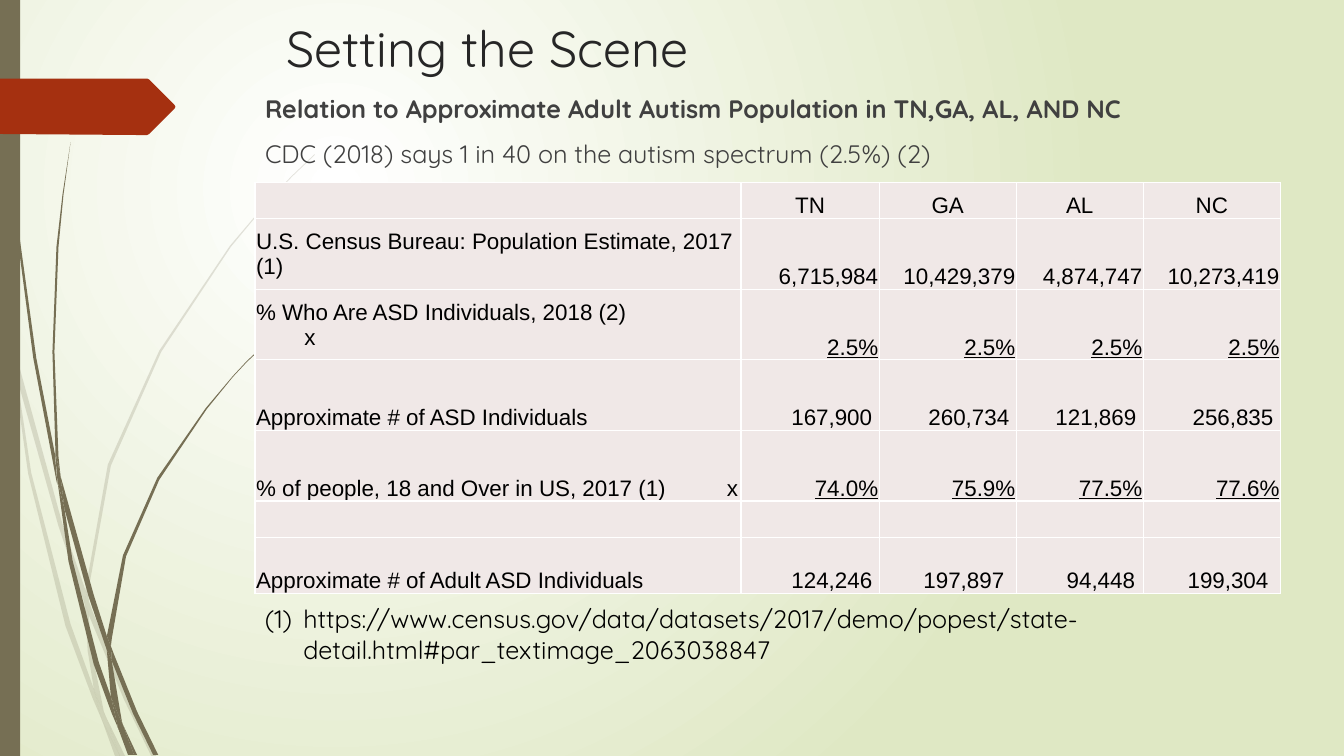
from dataclasses import dataclass

from lxml.etree import SubElement
from pptx import Presentation
from pptx.dml.color import RGBColor
from pptx.enum.shapes import MSO_SHAPE
from pptx.enum.text import MSO_ANCHOR, PP_ALIGN
from pptx.oxml.ns import qn
from pptx.shapes.base import BaseShape
from pptx.slide import Slide
from pptx.table import Table, _Cell
from pptx.text.text import _Paragraph
from pptx.util import Inches, Pt

Points = list[tuple[float, float]]

OLIVE, RUST, BLACK, WHITE, ROSE = "766F54", "A53010", "000000", "FFFFFF", "F0E8E7"
HEADING_FONT, TABLE_FONT = "Quicksand", "Arial"
COLUMN_WIDTHS = [4.82, 1.37, 1.36, 1.26, 1.36]
THIN = 0.01


@dataclass
class Wisp:
    opacity: int
    strands: list[Points]


@dataclass
class Line:
    text: str
    size: int
    color: str
    bold: bool = False


@dataclass
class TextBlock:
    left: float
    top: float
    width: float
    height: float
    lines: list[Line]


@dataclass
class TableRow:
    height: float
    label: str = ""
    values: tuple[str, ...] = ("", "", "", "")
    alignment: PP_ALIGN = PP_ALIGN.RIGHT
    underline: bool = False
    label_anchor: MSO_ANCHOR = MSO_ANCHOR.BOTTOM
    left_insets: tuple[float, ...] = (THIN,) * 4
    right_inset: float = THIN


PALE_WISP = Wisp(20, [
    [(0.11, 3.5), (0.09, 3.22), (0, 2.82), (0, 2.99), (0.1, 3.44)],
    [(0.58, 5.22), (0.84, 5.99), (0.85, 5.86), (0.62, 5.2), (0.14, 3.45), (0.17, 3.76)],
    [(0.92, 6.07), (0.88, 5.96), (0.88, 6.1), (1.23, 6.94), (1.5, 7.5), (1.55, 7.5), (1.27, 6.92)],
    [(1.19, 7.5), (1.24, 7.5), (1.05, 7.11)],
    [(0.93, 6.83), (0.7, 6.19), (0.31, 4.69), (0.17, 3.76), (0.11, 3.5), (0.28, 4.7), (0.65, 6.21),
     (0.92, 6.93), (1.01, 7.14), (0.99, 7.07)],
    [(0.84, 5.99), (0.87, 6.46), (0.93, 6.83), (0.96, 6.92), (1.05, 7.11), (1.03, 7.06), (0.91, 6.46),
     (0.88, 6.1), (0.88, 6.08)],
    [(0.88, 5.84), (1.1, 4.62), (1.6, 3.49), (2.29, 2.45), (2.68, 1.98), (2.9, 1.75), (3.12, 1.54),
     (3.12, 1.53), (2.89, 1.75), (2.68, 1.97), (2.28, 2.44), (1.58, 3.48), (1.07, 4.61), (0.85, 5.84),
     (0.85, 5.86), (0.88, 5.96)],
    [(1.01, 7.14), (1.14, 7.5), (1.19, 7.5)],
    [(0.88, 6.08), (0.88, 6.1), (0.88, 5.96), (0.85, 5.86), (0.84, 5.99)],
    [(0.96, 6.92), (0.93, 6.83), (0.99, 7.07), (1.01, 7.14), (1.19, 7.5), (1.05, 7.11)],
])
DARK_WISP = Wisp(100, [
    [(0.07, 1.1), (0.17, 2.33), (0.33, 3.55), (0.56, 4.77), (0.57, 4.81), (0.55, 4.57), (0.55, 4.53),
     (0.36, 3.55), (0.19, 2.32), (0.08, 1.09), (0.05, 0.48), (0.04, 0), (0.03, 0), (0.04, 0.48)],
    [(0.88, 5.92), (1.06, 6.45), (1.06, 6.31), (0.93, 5.9), (0.6, 4.72), (0.64, 5.05)],
    [(1.13, 6.49), (1.1, 6.41), (1.11, 6.56), (1.32, 7.08), (1.52, 7.49), (1.57, 7.49), (1.36, 7.06)],
    [(1.1, 6.91), (0.98, 6.57), (0.72, 5.56), (0.64, 5.05), (0.57, 4.77), (0.68, 5.57), (0.93, 6.59),
     (1.11, 7.08), (1.17, 7.22), (1.16, 7.17)],
    [(0.6, 4.72), (0.58, 4.53), (0.54, 3.49), (0.58, 2.45), (0.63, 1.93), (0.7, 1.41), (0.62, 1.93),
     (0.56, 2.45), (0.52, 3.49), (0.55, 4.49)],
    [(1.33, 7.49), (1.36, 7.49), (1.22, 7.19)],
    [(0.57, 4.77), (0.64, 5.05), (0.6, 4.72), (0.55, 4.49), (0.55, 4.53)],
    [(1.11, 6.33), (1.25, 5.52), (1.58, 4.76), (2.05, 4.06), (2.31, 3.74), (2.45, 3.59), (2.61, 3.44),
     (2.6, 3.44), (2.45, 3.58), (2.31, 3.73), (2.04, 4.05), (1.56, 4.74), (1.22, 5.51), (1.06, 6.31),
     (1.1, 6.41)],
    [(1.17, 7.22), (1.27, 7.49), (1.31, 7.49)],
    [(1.06, 6.45), (1.1, 6.91), (1.16, 7.06), (1.22, 7.19), (1.21, 7.16), (1.11, 6.56), (1.09, 6.51)],
    [(1.06, 6.45), (1.09, 6.51), (1.11, 6.56), (1.1, 6.41), (1.06, 6.31)],
    [(1.16, 7.06), (1.1, 6.91), (1.16, 7.17), (1.17, 7.22), (1.3, 7.49), (1.33, 7.49), (1.22, 7.19)],
])
ARROW_TAG: Points = [(0, 0.78), (1.46, 0.78), (1.48, 0.79), (1.73, 1.04), (1.74, 1.06), (1.73, 1.08),
                     (1.48, 1.33), (1.46, 1.34), (1.36, 1.34), (0, 1.33)]

TITLE = TextBlock(2.74, 0.12, 9.75, 0.76, [Line("Setting the Scene", 36, "262626")])
BODY = TextBlock(2.53, 0.88, 10.59, 0.9, [
    Line("Relation to Approximate Adult Autism Population in TN,GA, AL, AND NC", 18, "404040", True),
    Line("CDC (2018) says 1 in 40 on the autism spectrum (2.5%) (2)", 18, "404040"),
])
FOOTNOTE = TextBlock(2.53, 5.94, 10.17, 1.31, [
    Line("https://www.census.gov/data/datasets/2017/demo/popest/state-detail.html"
         "#par_textimage_2063038847", 18, BLACK),
])
TABLE_ROWS = [
    TableRow(0.36, values=("TN", "GA", "AL", "NC"), alignment=PP_ALIGN.CENTER),
    TableRow(0.7, "U.S. Census Bureau: Population Estimate, 2017 (1)",
             ("6,715,984", "10,429,379", "4,874,747", "10,273,419"), label_anchor=MSO_ANCHOR.MIDDLE),
    TableRow(0.7, "% Who Are ASD Individuals, 2018 (2)\nx", ("2.5%",) * 4, underline=True,
             label_anchor=MSO_ANCHOR.MIDDLE),
    TableRow(0.7, "Approximate # of ASD Individuals", ("167,900", "260,734", "121,869", "256,835"),
             right_inset=0.07),
    TableRow(0.7, "% of people, 18 and Over in US, 2017 (1)\tx", ("74.0%", "75.9%", "77.5%", "77.6%"),
             underline=True),
    TableRow(0.36),
    TableRow(0.56, "Approximate # of Adult ASD Individuals", ("124,246", "197,897", "94,448", "199,304"),
             PP_ALIGN.LEFT, left_insets=(0.5, 0.44, 0.5, 0.44)),
]


def color(hex_value: str) -> RGBColor:
    return RGBColor.from_string(hex_value)


def paint(shape: BaseShape, fill: str, opacity: int = 100) -> None:
    shape.shadow.inherit = False
    shape.fill.solid()
    shape.fill.fore_color.rgb = color(fill)
    shape.line.fill.background()
    if opacity < 100:
        fill_color = shape.element.spPr.find(qn("a:solidFill"))[0]
        SubElement(fill_color, qn("a:alpha"), val=str(opacity * 1000))


def draw_outline(shapes, points: Points, fill: str, opacity: int = 100) -> None:
    vertices = [(Inches(x), Inches(y)) for x, y in points]
    builder = shapes.build_freeform(*vertices[0])
    builder.add_line_segments(vertices[1:], close=True)
    paint(builder.convert_to_shape(), fill, opacity)


def draw_background(slide: Slide) -> None:
    fill = slide.background.fill
    fill.gradient()
    for stop, hex_value in zip(fill.gradient_stops, (WHITE, "DFE8C4")):
        stop.color.rgb = color(hex_value)
    gradient = next(slide.element.iter(qn("a:gradFill")))
    gradient.remove(gradient.find(qn("a:lin")))
    circle = SubElement(gradient, qn("a:path"), {"path": "circle"})
    SubElement(circle, qn("a:fillToRect"), l="50000", t="50000", r="100000", b="100000")


def format_runs(paragraph: _Paragraph, font_name: str, line: Line, underline: bool = False) -> None:
    for run in paragraph.runs:
        run.font.name = font_name
        run.font.size = Pt(line.size)
        run.font.bold = line.bold
        run.font.underline = underline
        run.font.color.rgb = color(line.color)


def draw_text(slide: Slide, block: TextBlock) -> BaseShape:
    box = slide.shapes.add_textbox(*map(Inches, (block.left, block.top, block.width, block.height)))
    box.text_frame.word_wrap = True
    box.text_frame.text = "\n".join(line.text for line in block.lines)
    for index, (paragraph, line) in enumerate(zip(box.text_frame.paragraphs, block.lines)):
        paragraph.space_before = Pt(10 if index else 0)
        format_runs(paragraph, HEADING_FONT, line)
    return box


def number_paragraph(paragraph: _Paragraph) -> None:
    properties = paragraph._p.get_or_add_pPr()
    properties.set("marL", str(Inches(0.38)))
    properties.set("indent", str(Inches(-0.38)))
    SubElement(properties, qn("a:buAutoNum"), type="arabicParenBoth")


def style_cell(cell: _Cell, text: str, row: TableRow, column: int) -> None:
    cell.text_frame.text = text
    cell.margin_top, cell.margin_bottom = Inches(THIN), 0
    cell.margin_left = Inches(row.left_insets[column - 1] if column else THIN)
    cell.margin_right = Inches(row.right_inset if column else THIN)
    cell.vertical_anchor = MSO_ANCHOR.BOTTOM if column else row.label_anchor
    properties = cell._tc.get_or_add_tcPr()
    for side in "LRTB":
        border = SubElement(properties, qn(f"a:ln{side}"), w=str(Pt(1)))
        SubElement(SubElement(border, qn("a:solidFill")), qn("a:srgbClr"), val=WHITE)
    cell.fill.solid()
    cell.fill.fore_color.rgb = color(ROSE)
    for paragraph in cell.text_frame.paragraphs:
        paragraph.alignment = row.alignment if column else PP_ALIGN.LEFT
        format_runs(paragraph, TABLE_FONT, Line(text, 16, BLACK), row.underline and column > 0)
        paragraph_properties = paragraph._p.get_or_add_pPr()
        if paragraph.text == "x":
            paragraph_properties.set("marL", str(Inches(0.48)))
        if "\t" in paragraph.text:
            tabs = SubElement(paragraph_properties, qn("a:tabLst"))
            SubElement(tabs, qn("a:tab"), pos=str(Inches(4.67)), algn="l")


def draw_table(slide: Slide) -> None:
    height = sum(row.height for row in TABLE_ROWS)
    frame = slide.shapes.add_table(len(TABLE_ROWS), len(COLUMN_WIDTHS), Inches(2.53), Inches(1.81),
                                   Inches(sum(COLUMN_WIDTHS)), Inches(height))
    table: Table = frame.table
    table.first_row = table.horz_banding = False
    for column, width in zip(table.columns, COLUMN_WIDTHS):
        column.width = Inches(width)
    for index, row in enumerate(TABLE_ROWS):
        table.rows[index].height = Inches(row.height)
        for column, text in enumerate((row.label, *row.values)):
            style_cell(table.cell(index, column), text, row, column)


def main() -> None:
    """Build the adult autism population slide."""
    presentation = Presentation()
    presentation.slide_width, presentation.slide_height = Inches(13.33), Inches(7.5)
    slide = presentation.slides.add_slide(presentation.slide_layouts[6])
    draw_background(slide)
    for wisp in (PALE_WISP, DARK_WISP):
        group = slide.shapes.add_group_shape()
        for strand in wisp.strands:
            draw_outline(group.shapes, strand, OLIVE, wisp.opacity)
    side_bar = slide.shapes.add_shape(MSO_SHAPE.RECTANGLE, 0, 0, Inches(0.2), Inches(7.5))
    paint(side_bar, OLIVE)
    draw_outline(slide.shapes, ARROW_TAG, RUST)
    draw_text(slide, TITLE)
    draw_text(slide, BODY)
    draw_table(slide)
    footnote = draw_text(slide, FOOTNOTE)
    number_paragraph(footnote.text_frame.paragraphs[0])
    presentation.save("out.pptx")


if __name__ == "__main__":
    main()
